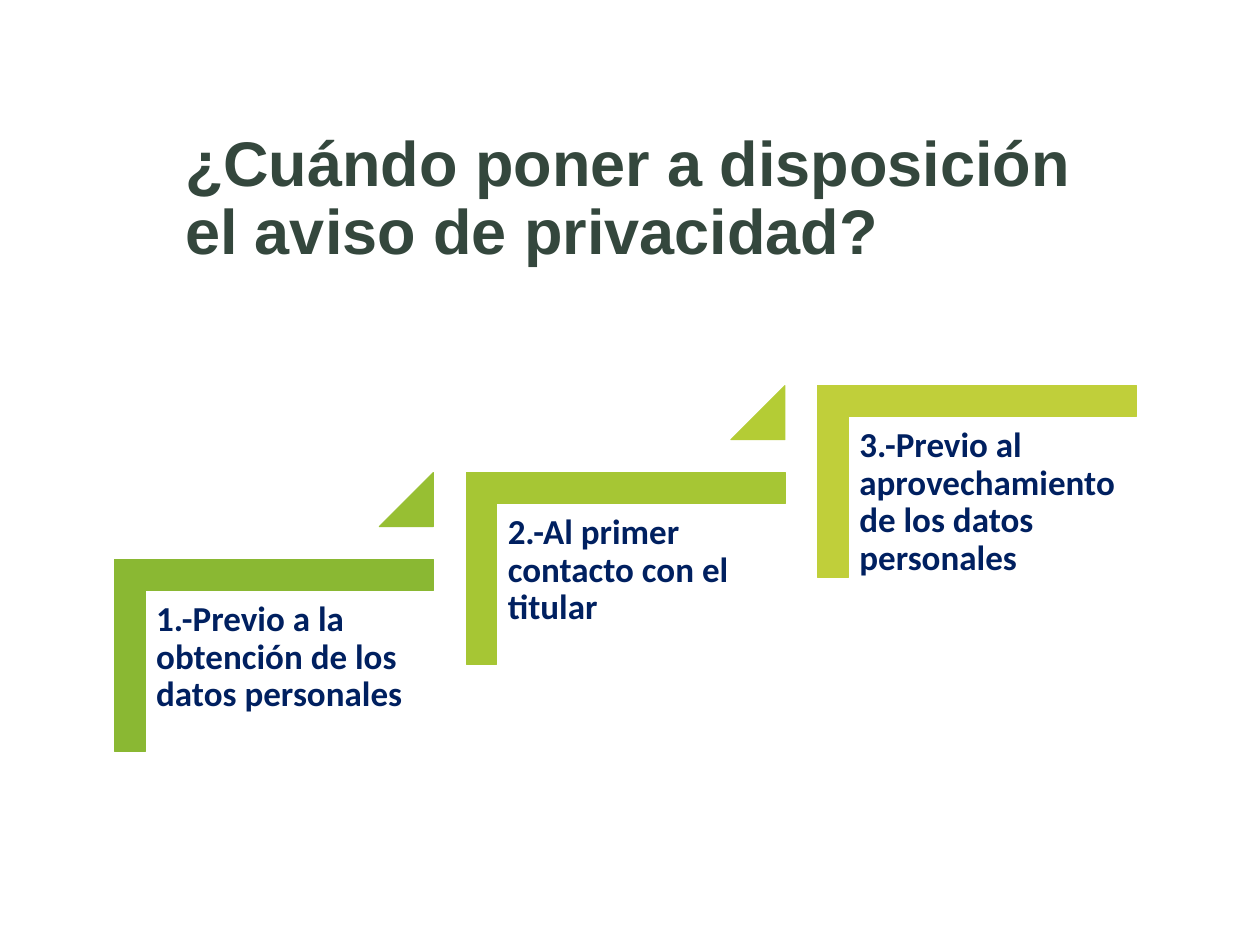
from pptx import Presentation
from pptx.dml.color import RGBColor
from pptx.enum.shapes import MSO_SHAPE
from pptx.enum.text import MSO_ANCHOR
from pptx.util import Inches, Pt

CORNER = MSO_SHAPE.CORNER
TRIANGLE = MSO_SHAPE.ISOSCELES_TRIANGLE
MIDDLE = MSO_ANCHOR.MIDDLE

TITLE_COLOR = RGBColor(0x34, 0x47, 0x3D)
TEXT_COLOR = RGBColor(0x00, 0x20, 0x60)

# Step text, corner colour, colour of the triangle leading to the next step
STEPS = [
    ("1.-Previo a la obtención de los datos personales",
     RGBColor(0x8A, 0xB8, 0x33), RGBColor(0x97, 0xBF, 0x33)),
    ("2.-Al primer contacto con el titular",
     RGBColor(0xA6, 0xC6, 0x34), RGBColor(0xB4, 0xCC, 0x35)),
    ("3.-Previo al aprovechamiento de los datos personales",
     RGBColor(0xC0, 0xCF, 0x3A), None),
]
STEP_WIDTH, STEP_HEIGHT = Inches(2.53), Inches(1.52)
STEP_PITCH, STEP_RISE = Inches(2.79), Inches(0.69)


def add_text(page, left, top, width, height, text, font_name, size, color):
    box = page.shapes.add_textbox(left, top, width, height)
    frame = box.text_frame
    frame.word_wrap = True
    frame.text = text
    para = frame.paragraphs[0]
    para.line_spacing = 0.9
    font = para.runs[0].font
    font.name, font.size, font.bold = font_name, Pt(size), True
    font.color.rgb = color
    return frame


def add_solid(page, kind, left, top, width, height, color, adjustments):
    shape = page.shapes.add_shape(kind, left, top, width, height)
    for index, value in enumerate(adjustments):
        shape.adjustments[index] = value
    shape.shadow.inherit = False
    shape.fill.solid()
    shape.fill.fore_color.rgb = color
    shape.line.color.rgb = color
    shape.line.width = Pt(0.5)
    return shape


def add_title(page, left, top, width, height):
    frame = add_text(page, left, top, width, height,
                     "¿Cuándo poner a disposición el aviso de privacidad?",
                     "Arial", 36, TITLE_COLOR)
    frame.vertical_anchor = MIDDLE


def add_step(page, left, top, width, height, text, color, next_color):
    # The corner is turned a quarter, so its unrotated sides are swapped.
    shift = (width - height) // 2
    corner = add_solid(page, CORNER, left + shift, top - shift, height, width,
                       color, [0.16, 0.16])
    corner.rotation = 90

    frame = add_text(page, left + Inches(0.25), top + Inches(0.25),
                     Inches(2.28), Inches(2), text, "Calibri", 20, TEXT_COLOR)
    frame.margin_left = frame.margin_right = Inches(0.08)
    frame.margin_top = frame.margin_bottom = Inches(0.08)

    if next_color is not None:
        side = Inches(0.43)
        add_solid(page, TRIANGLE, left + width - side, top - STEP_RISE,
                  side, side, next_color, [1])


def add_staircase(page, left, top):
    """Place the steps from the lowest, whose top left corner is given."""
    for index, (text, color, next_color) in enumerate(STEPS):
        add_step(page, left + index * STEP_PITCH, top - index * STEP_RISE,
                 STEP_WIDTH, STEP_HEIGHT, text, color, next_color)


def main():
    deck = Presentation()
    deck.slide_width, deck.slide_height = Inches(10), Inches(7.5)
    page = deck.slides.add_slide(deck.slide_layouts[6])
    add_title(page, Inches(1.37), Inches(1.07), Inches(7.49), Inches(1.03))
    add_staircase(page, Inches(0.91), Inches(4.44))
    deck.save("out.pptx")


if __name__ == "__main__":
    main()
